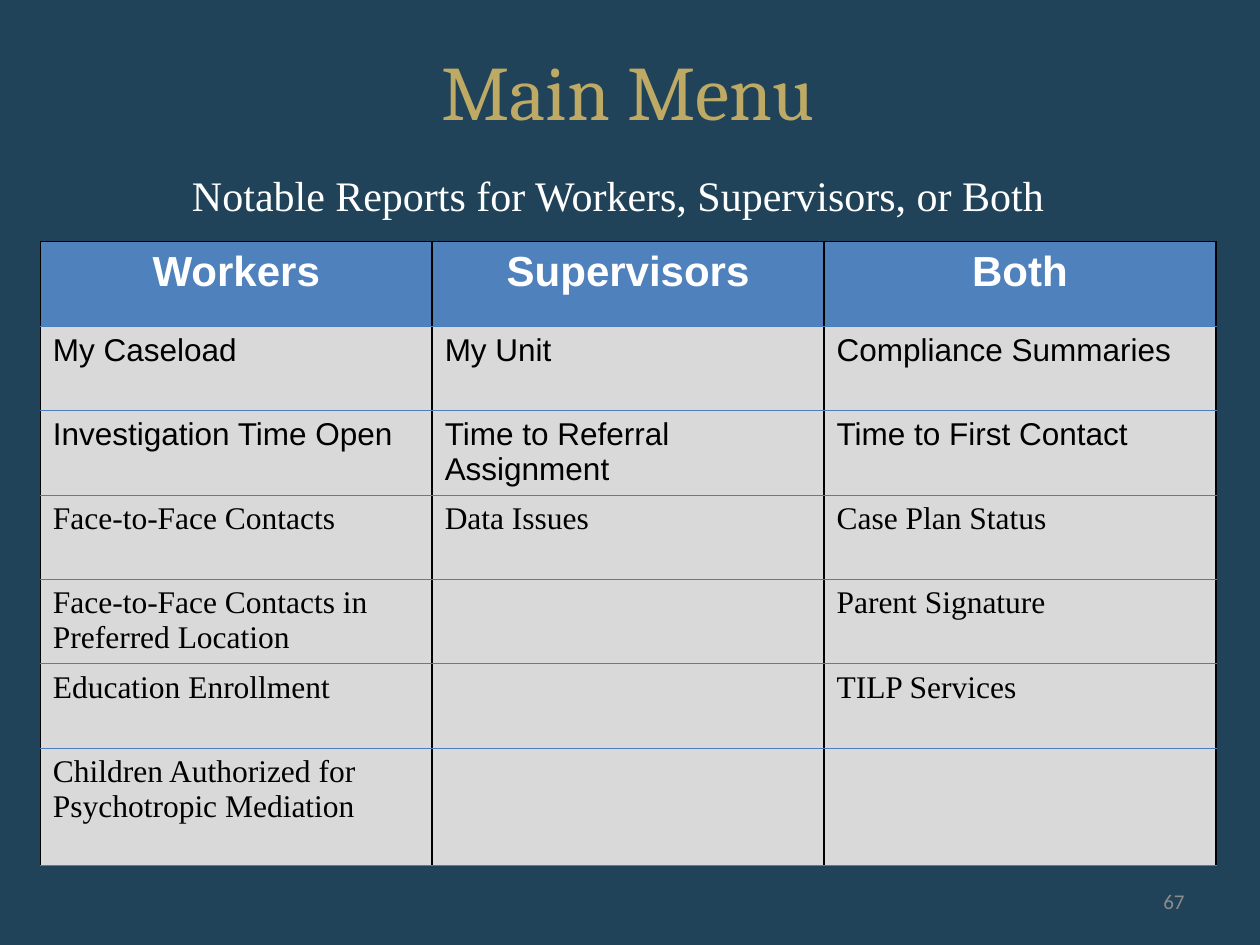
from dataclasses import dataclass
from lxml import etree
from pptx import Presentation
from pptx import util as u
from pptx.dml.color import RGBColor
from pptx.enum import text
from pptx.oxml import ns

NAVY = RGBColor(0x20, 0x43, 0x59)
GOLD = RGBColor(0xBE, 0xAA, 0x64)
WHITE = RGBColor(0xFF, 0xFF, 0xFF)
BLACK = RGBColor(0, 0, 0)
BLUE = RGBColor(0x4F, 0x81, 0xBD)
RULE = RGBColor(0x4B, 0x7E, 0xBC)
PALE = RGBColor(0xD9, 0xD9, 0xD9)
GRAY = RGBColor(0x8C, 0x8C, 0x8C)

WIDE, HIGH = u.Inches(10), u.Inches(7.5)
COL, ROW, LAST = u.Inches(3.11), u.Inches(0.67), u.Inches(0.93)
LEFT, TOP = u.Inches(0.32), u.Inches(1.92)
MID, END = text.PP_ALIGN.CENTER, text.PP_ALIGN.RIGHT
HIGHEST, MIDDLE = text.MSO_ANCHOR.TOP, text.MSO_ANCHOR.MIDDLE


@dataclass
class Font:
    name: str
    size: int
    color: RGBColor
    bold: bool = False


@dataclass
class Label:
    words: str
    x: float
    y: float
    w: float
    h: float
    font: Font
    align: int = MID
    anchor: int = HIGHEST


HEAD = Font("Arial", 24, WHITE, True)
SANS = Font("Arial", 18, BLACK)
SERIF = Font("Times New Roman", 18, BLACK)

LABELS = [
    Label("Main Menu", 0, 0.04, 0.997, 0.167, Font("Cambria", 44, GOLD)),
    Label("Notable Reports for Workers, Supervisors, or Both",
          0.032, 0.173, 0.917, 0.067, Font("Times New Roman", 24, WHITE)),
    Label("67", 0.717, 0.927, 0.233, 0.053, Font("Calibri", 12, GRAY), END, MIDDLE),
]

ROWS = [
    (HEAD, "Workers", "Supervisors", "Both"),
    (SANS, "My Caseload", "My Unit", "Compliance Summaries"),
    (SANS, "Investigation Time Open", "Time to Referral Assignment", "Time to First Contact"),
    (SERIF, "Face-to-Face Contacts", "Data Issues", "Case Plan Status"),
    (SERIF, "Face-to-Face Contacts in Preferred Location", "", "Parent Signature"),
    (SERIF, "Education Enrollment", "", "TILP Services"),
    (SERIF, "Children Authorized for Psychotropic Mediation", "", ""),
]


def style(para, font: Font) -> None:
    para.font.name = font.name
    para.font.size = u.Pt(font.size)
    para.font.bold = font.bold
    para.font.color.rgb = font.color


def write(slide, item: Label) -> None:
    box = slide.shapes.add_textbox(
        int(item.x * WIDE), int(item.y * HIGH), int(item.w * WIDE), int(item.h * HIGH))
    frame = box.text_frame
    frame.word_wrap = True
    frame.vertical_anchor = item.anchor
    para = frame.paragraphs[0]
    para.text = item.words
    para.alignment = item.align
    style(para, item.font)


def edge(cell, top: RGBColor) -> None:
    props = cell._tc.get_or_add_tcPr()
    sides = [("L", BLACK, 1), ("R", BLACK, 1), ("T", top, 0.75), ("B", RULE, 0.75)]
    for spot, (side, color, width) in enumerate(sides):
        line = etree.Element(ns.qn(f"a:ln{side}"), w=str(u.Pt(width)))
        fill = etree.SubElement(line, ns.qn("a:solidFill"))
        etree.SubElement(fill, ns.qn("a:srgbClr"), val=str(color))
        props.insert(spot, line)


def grid(slide) -> None:
    count = len(ROWS)
    table = slide.shapes.add_table(
        count, 3, LEFT, TOP, 3 * COL, (count - 1) * ROW + LAST).table
    for col in table.columns:
        col.width = COL
    for r, (font, *names) in enumerate(ROWS):
        table.rows[r].height = LAST if r == count - 1 else ROW
        for c, name in enumerate(names):
            cell = table.cell(r, c)
            cell.fill.solid()
            cell.fill.fore_color.rgb = PALE if r else BLUE
            edge(cell, RULE if r else BLACK)
            para = cell.text_frame.paragraphs[0]
            para.text = name
            para.alignment = None if r else MID
            style(para, font)


def main() -> None:
    deck = Presentation()
    deck.slide_width, deck.slide_height = WIDE, HIGH
    slide = deck.slides.add_slide(deck.slide_layouts[6])
    slide.background.fill.solid()
    slide.background.fill.fore_color.rgb = NAVY
    grid(slide)
    for item in LABELS:
        write(slide, item)
    deck.save("out.pptx")


if __name__ == "__main__":
    main()
